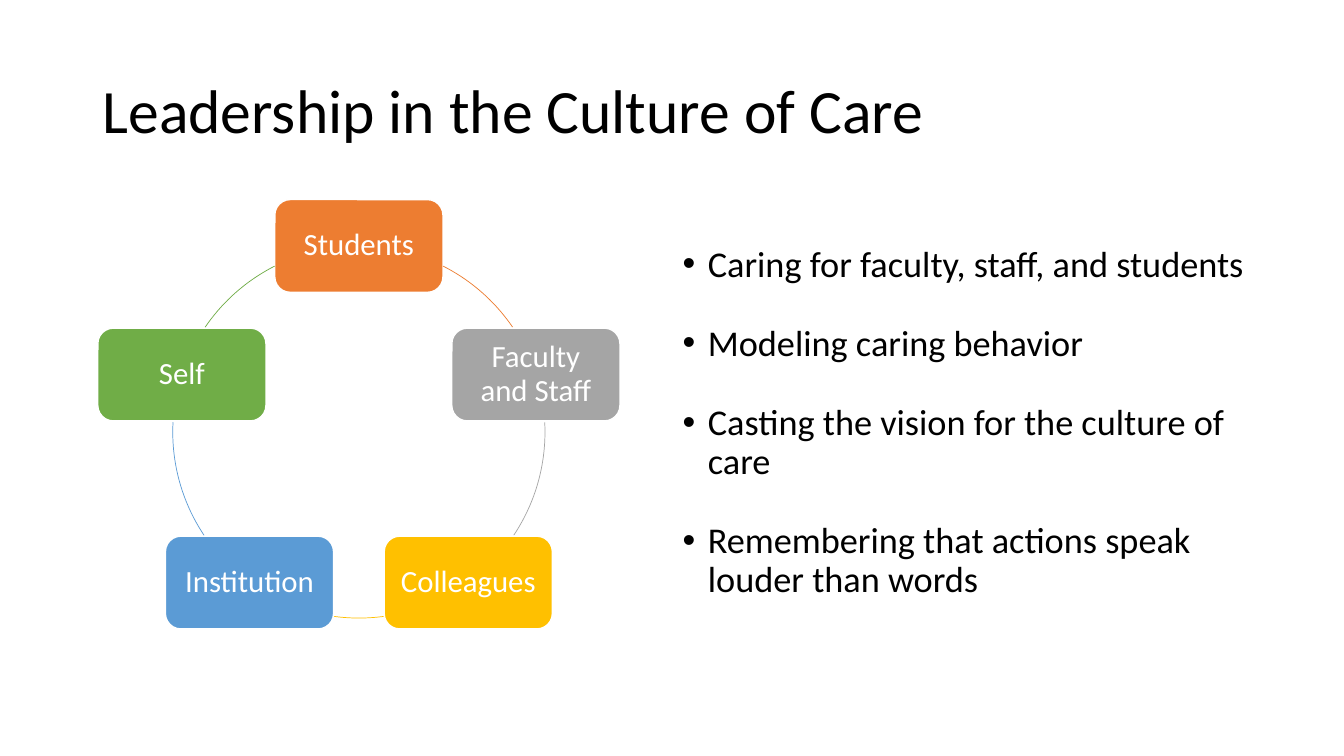
import math

import pptx
import pptx.dml.color
import pptx.enum.shapes
import pptx.enum.text
import pptx.util

Pt = pptx.util.Pt
Inches = pptx.util.Inches
SHAPE = pptx.enum.shapes.MSO_SHAPE
ALIGN = pptx.enum.text.PP_ALIGN
ANCHOR = pptx.enum.text.MSO_ANCHOR

WIDTH, HEIGHT = Inches(13.33), Inches(7.5)
FONT = "Calibri"
BLACK, WHITE = "000000", "FFFFFF"

# Label, colour, and the arc that follows it (degrees clockwise from the top)
GROUPS = [
    ("Students", "ED7D31", 26.9, 55.7),
    ("Faculty and Staff", "A5A5A5", 87, 123.7),
    ("Colleagues", "FFC000", 172.4, 187.6),
    ("Institution", "5B9BD5", 236.3, 273),
    ("Self", "70AD47", 304.3, 333.1),
]
ACTIONS = [
    "Caring for faculty, staff, and students",
    "Modeling caring behavior",
    "Casting the vision for the culture of care",
    "Remembering that actions speak louder than words",
]


def rgb(value):
    return pptx.dml.color.RGBColor.from_string(value)


def share(left, top, width, height):
    """Turn percentages of the slide into a box."""
    return (int(WIDTH * left / 100), int(HEIGHT * top / 100),
            int(WIDTH * width / 100), int(HEIGHT * height / 100))


def place(sp, box):
    sp.left, sp.top, sp.width, sp.height = box


def add_text(p, text, size, color, align):
    p.alignment = align
    p.line_spacing = 0.9
    r = p.add_run()
    r.text = text
    r.font.name = FONT
    r.font.size = Pt(size)
    r.font.color.rgb = rgb(color)


def add_title(s, box, text):
    sp = s.shapes.title
    place(sp, box)
    tf = sp.text_frame
    tf.auto_size = pptx.enum.text.MSO_AUTO_SIZE.NONE
    tf.vertical_anchor = ANCHOR.MIDDLE
    add_text(tf.paragraphs[0], text, 44, BLACK, ALIGN.LEFT)


def add_list(s, box, items):
    sp = s.placeholders[1]
    place(sp, box)
    tf = sp.text_frame
    tf.auto_size = pptx.enum.text.MSO_AUTO_SIZE.NONE
    for i, item in enumerate(items):
        p = tf.add_paragraph() if i else tf.paragraphs[0]
        # Hanging indent for the bullet
        pPr = p._p.get_or_add_pPr()
        pPr.set("marL", str(Inches(0.25)))
        pPr.set("indent", str(-Inches(0.25)))
        p.space_before = Pt(28.5 if i else 0)
        add_text(p, item, 25.9, BLACK, ALIGN.LEFT)


def add_arc(s, box, start, end, color):
    sp = s.shapes.add_shape(SHAPE.ARC, *box)
    sp.shadow.inherit = False
    # Preset arcs count from three o'clock, in 0.6 units per degree
    for i, angle in enumerate((start, end)):
        sp.adjustments[i] = (angle - 90) % 360 * 0.6
    sp.fill.background()
    sp.line.color.rgb = rgb(color)
    sp.line.width = Pt(0.5)


def add_node(s, box, label, color):
    sp = s.shapes.add_shape(SHAPE.ROUNDED_RECTANGLE, *box)
    sp.shadow.inherit = False
    sp.fill.solid()
    sp.fill.fore_color.rgb = rgb(color)
    sp.line.color.rgb = rgb(WHITE)
    sp.line.width = Pt(1)
    tf = sp.text_frame
    tf.word_wrap = True
    tf.vertical_anchor = ANCHOR.MIDDLE
    tf.margin_left = tf.margin_right = Inches(0.09)
    tf.margin_top = tf.margin_bottom = Inches(0.09)
    add_text(tf.paragraphs[0], label, 22, WHITE, ALIGN.CENTER)


def add_cycle(s, box, groups):
    left, top, width, height = box
    node_w, node_h = int(width * 0.322), int(height * 0.216)
    step = 2 * math.pi / len(groups)
    # The widest pair of nodes touches both sides of the box
    radius = int((width - node_w) / 2 / math.sin(step))
    cx, cy = left + width // 2, top + node_h // 2 + radius
    ring = (cx - radius, cy - radius, 2 * radius, 2 * radius)
    for i, (label, color, start, end) in enumerate(groups):
        x = cx + radius * math.sin(i * step)
        y = cy - radius * math.cos(i * step)
        node = (int(x - node_w / 2), int(y - node_h / 2), node_w, node_h)
        add_node(s, node, label, color)
        add_arc(s, ring, start, end, color)


def main():
    prs = pptx.Presentation()
    prs.slide_width, prs.slide_height = WIDTH, HEIGHT
    s = prs.slides.add_slide(prs.slide_layouts[1])
    s.background.fill.solid()
    s.background.fill.fore_color.rgb = rgb(WHITE)
    add_title(s, share(6.88, 5.33, 86.25, 19.33),
              "Leadership in the Culture of Care")
    add_cycle(s, share(7.28, 26.4, 38.85, 56.8), GROUPS)
    add_list(s, share(50.04, 31.87, 45.39, 49.47), ACTIONS)
    prs.save("out.pptx")


if __name__ == "__main__":
    main()
